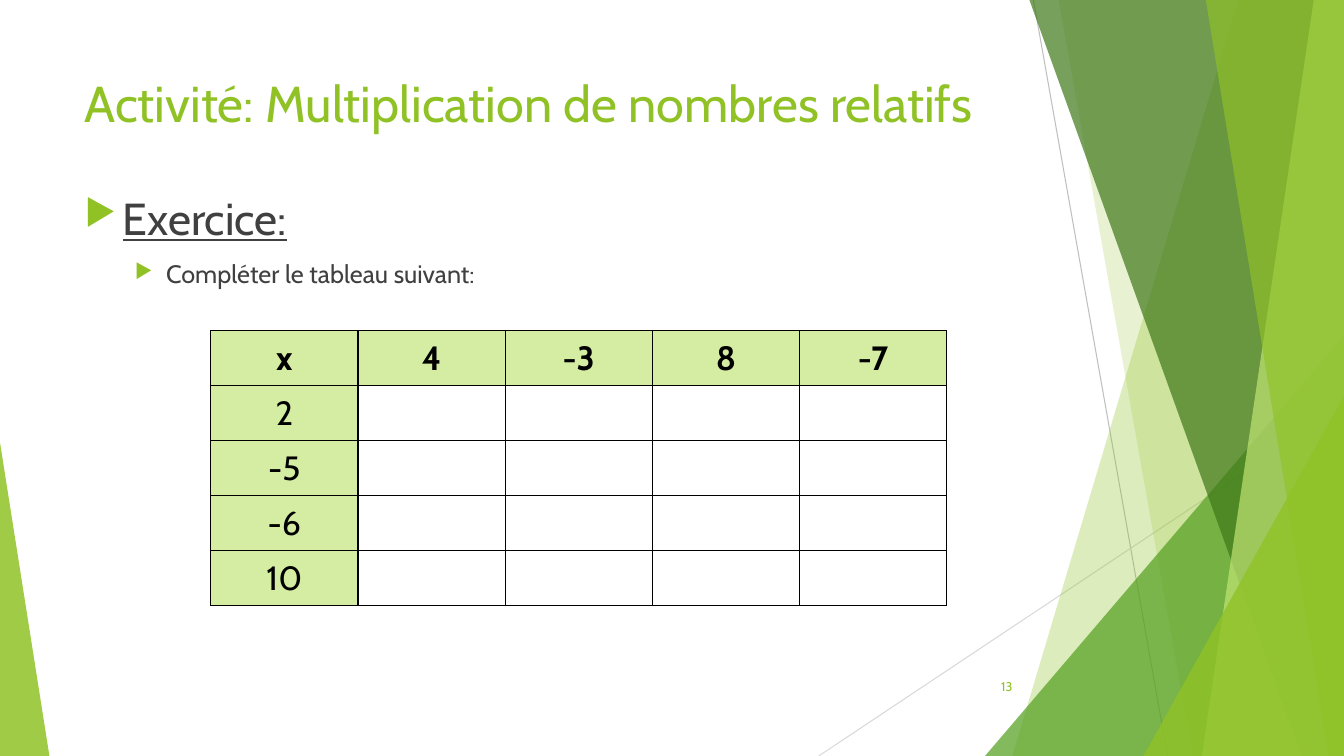
from lxml.etree import SubElement
from pptx import Presentation
from pptx.dml.color import RGBColor
from pptx.enum.shapes import MSO_CONNECTOR as Connector, MSO_SHAPE as Shape
from pptx.enum.text import MSO_ANCHOR as Anchor, PP_ALIGN as Align
from pptx.oxml.ns import qn
from pptx.util import Inches, Pt

FONT = "Cabin"
GREEN, DARK_GREEN, GREY = "90C226", "3F7819", "404040"
HEADER_FILL, BLACK = "D5EDA2", "000000"
WIDTH, HEIGHT = 13.33, 7.5
FACTORS_ACROSS = ["4", "-3", "8", "-7"]
FACTORS_DOWN = ["2", "-5", "-6", "10"]


def color(value):
    """Turn a hex string into a colour."""
    return RGBColor.from_string(value)


def add_run(paragraph, text, size, value, bold=False, underline=False):
    """Append one formatted run to a paragraph."""
    run = paragraph.add_run()
    run.text = text
    font = run.font
    font.name, font.size = FONT, Pt(size)
    font.bold, font.underline = bold, underline
    font.color.rgb = color(value)


def add_text_frame(slide, box, anchor=Anchor.TOP):
    """Add a wrapping text box and return its text frame."""
    frame = slide.shapes.add_textbox(*map(Inches, box)).text_frame
    frame.word_wrap = True
    frame.vertical_anchor = anchor
    return frame


def paint(shape, value, opacity):
    """Give a shape a translucent fill without outline or shadow."""
    shape.shadow.inherit = False
    shape.fill.solid()
    shape.fill.fore_color.rgb = color(value)
    shape.line.fill.background()
    fill_color = shape.fill._xPr.find(qn("a:solidFill"))[0]
    SubElement(fill_color, qn("a:alpha"), val=str(opacity * 1000))


def add_thin_line(slide, start, end, value):
    """Draw a thin straight line between two points."""
    line = slide.shapes.add_connector(
        Connector.STRAIGHT, *map(Inches, (*start, *end)))
    line.line.color.rgb = color(value)
    line.line.width = Pt(0.75)
    SubElement(line._element.spPr, qn("a:effectLst"))


def add_band(slide, top_left, bottom_left, value, opacity):
    """Draw a band from a slanted left edge to the right side of the slide."""
    corners = [(top_left, 0), (WIDTH, 0), (WIDTH, HEIGHT), (bottom_left, HEIGHT)]
    points = [(Inches(x), Inches(y)) for x, y in corners]
    builder = slide.shapes.build_freeform(*points[0])
    builder.add_line_segments(points[1:], close=True)
    paint(builder.convert_to_shape(), value, opacity)


def add_corner(slide, left, top, width, apex, value, opacity):
    """Draw a triangle standing on the bottom of the slide."""
    triangle = slide.shapes.add_shape(
        Shape.ISOSCELES_TRIANGLE,
        *map(Inches, (left, top, width, HEIGHT - top)))
    triangle.adjustments[0] = apex
    paint(triangle, value, opacity)


def add_decoration(slide):
    """Draw the overlapping green facets on both sides."""
    add_thin_line(slide, (10.25, 0), (11.58, HEIGHT), "BFBFBF")
    add_thin_line(slide, (WIDTH, 4.03), (8.12, HEIGHT), "D9D9D9")
    add_band(slide, 12.28, 10.04, GREEN, 30)
    add_band(slide, 10.5, 11.83, GREEN, 20)
    add_corner(slide, 9.77, 3.33, 3.56, 1, "54A021", 72)
    add_band(slide, 10.21, 12.91, DARK_GREEN, 70)
    add_band(slide, 13.03, 11.92, "C0E474", 70)
    add_band(slide, 11.96, 13.18, GREEN, 65)
    add_corner(slide, 11.34, 3.93, 1.99, 1, GREEN, 80)
    add_corner(slide, 0, 4.39, 0.49, 0, GREEN, 85)


def add_title(slide, box):
    """Add the slide title."""
    paragraph = add_text_frame(slide, box).paragraphs[0]
    add_run(paragraph, "Activité: Multiplication de nombres relatifs", 36, GREEN)


def add_slide_number(slide, box):
    """Add the right-aligned slide number."""
    paragraph = add_text_frame(slide, box, Anchor.MIDDLE).paragraphs[0]
    paragraph.alignment = Align.RIGHT
    add_run(paragraph, "13", 9, GREEN)


def set_bullet(paragraph, level, margin, hanging):
    """Give a paragraph a green arrow bullet with a hanging indent."""
    paragraph.level = level
    paragraph.space_before = Pt(10)
    properties = paragraph._p.get_or_add_pPr()
    properties.set("marL", str(Inches(margin)))
    properties.set("indent", str(-Inches(hanging)))
    bullet_color = SubElement(properties, qn("a:buClr"))
    SubElement(bullet_color, qn("a:srgbClr"), val=GREEN)
    SubElement(properties, qn("a:buSzPct"), val="80000")
    SubElement(properties, qn("a:buChar"), char="▶")


def add_instructions(slide, box):
    """Add the exercise heading and its instruction."""
    frame = add_text_frame(slide, box)
    heading = frame.paragraphs[0]
    set_bullet(heading, 0, 0.38, 0.38)
    add_run(heading, "Exercice:", 32, GREY, underline=True)
    instruction = frame.add_paragraph()
    set_bullet(instruction, 1, 0.81, 0.31)
    add_run(instruction, "Compléter le tableau suivant:", 18, GREY)


def add_borders(cell):
    """Draw a thin black border on all sides of a cell."""
    properties = cell._tc.get_or_add_tcPr()
    for side in ("lnL", "lnR", "lnT", "lnB"):
        border = SubElement(properties, qn(f"a:{side}"), w=str(Pt(1)))
        fill = SubElement(border, qn("a:solidFill"))
        SubElement(fill, qn("a:srgbClr"), val=BLACK)


def add_multiplication_table(slide, box):
    """Add the multiplication table with empty answer cells."""
    blanks = [""] * len(FACTORS_ACROSS)
    rows = [["x", *FACTORS_ACROSS]] + [[factor, *blanks] for factor in FACTORS_DOWN]
    table = slide.shapes.add_table(
        len(rows), len(rows[0]), *map(Inches, box)).table
    table.first_row = table.horz_banding = False
    for row_index, row in enumerate(rows):
        for column_index, text in enumerate(row):
            cell = table.cell(row_index, column_index)
            add_borders(cell)
            cell.vertical_anchor = Anchor.MIDDLE
            if not text:
                cell.fill.background()
                continue
            cell.fill.solid()
            cell.fill.fore_color.rgb = color(HEADER_FILL)
            paragraph = cell.text_frame.paragraphs[0]
            paragraph.alignment = Align.CENTER
            add_run(paragraph, text, 24, BLACK, bold=row_index == 0)


def main():
    """Build and save the presentation."""
    presentation = Presentation()
    presentation.slide_width = Inches(WIDTH)
    presentation.slide_height = Inches(HEIGHT)
    slide = presentation.slides.add_slide(presentation.slide_layouts[6])
    add_decoration(slide)
    add_title(slide, (0.74, 0.67, 11.01, 1.44))
    add_slide_number(slide, (9.39, 6.61, 0.75, 0.4))
    add_instructions(slide, (0.74, 1.84, 9.4, 4.24))
    add_multiplication_table(slide, (2.09, 3.28, 7.3, 2.73))
    presentation.save("out.pptx")


if __name__ == "__main__":
    main()
